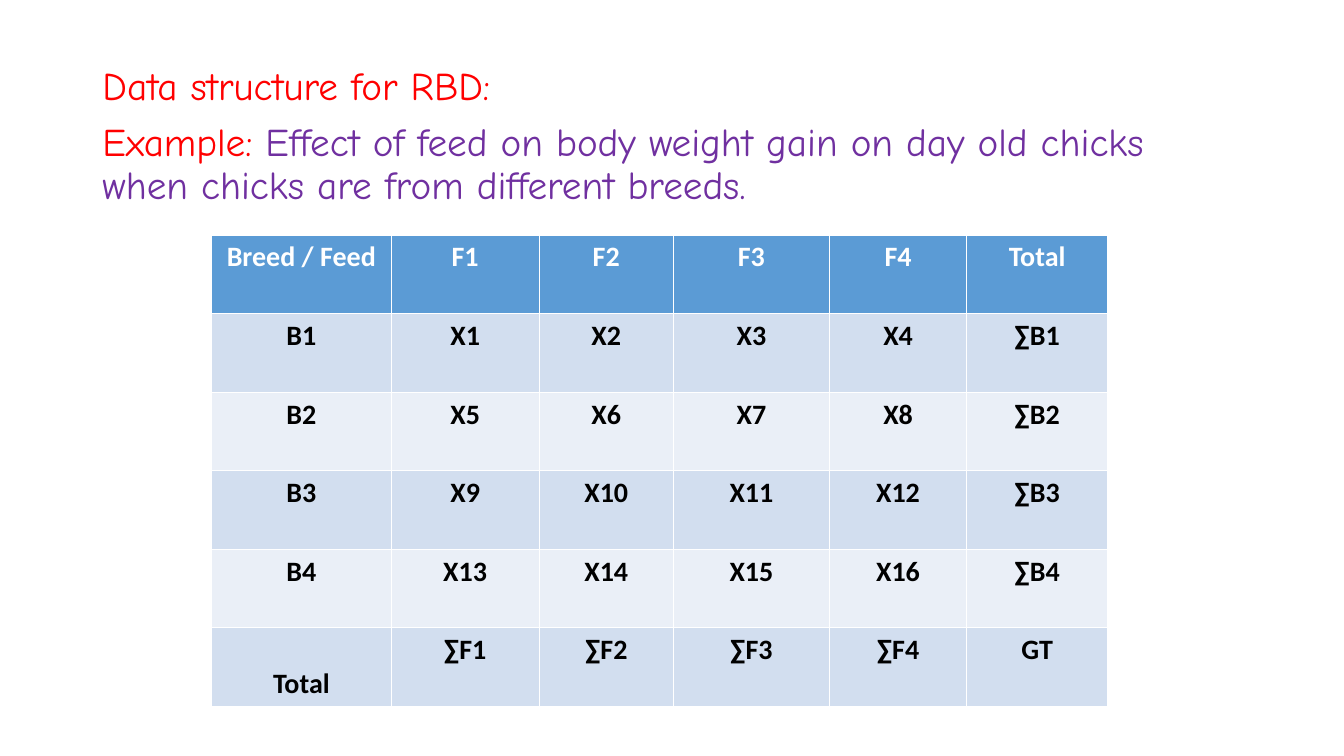
from pptx import Presentation
from pptx.dml.color import RGBColor as Rgb
from pptx.enum import text
from pptx.oxml import ns
from pptx.util import Pt
from lxml import etree

hues = {"red": "FF0000", "violet": "7030A0", "head": "5B9BD5", "dark": "D2DEEF",
        "light": "EAEFF7", "white": "FFFFFF", "black": "000000"}


def paint(item, hue):
    item.rgb = Rgb.from_string(hues[hue])


deck = Presentation()
deck.slide_width, deck.slide_height = Pt(960), Pt(540)
slide = deck.slides.add_slide(deck.slide_layouts[1])
title = slide.shapes.title.element
title.getparent().remove(title)

body = slide.placeholders[1]
body.left, body.top, body.width, body.height = Pt(66), Pt(44), Pt(828), Pt(443)
frame = body.text_frame
frame.word_wrap = True
frame.auto_size = text.MSO_AUTO_SIZE.NONE
frame.vertical_anchor = text.MSO_ANCHOR.TOP

intro = [
    [("Data structure for RBD:", "red")],
    [("Example: ", "red"),
     ("Effect of feed on body weight gain on day old chicks "
      "when chicks are from different breeds.", "violet")],
]
for n, parts in enumerate(intro):
    para = frame.add_paragraph() if n else frame.paragraphs[0]
    props = para._p.get_or_add_pPr()
    props.set("marL", "0")
    props.set("indent", "0")
    etree.SubElement(props, ns.qn("a:buNone"))
    para.line_spacing = 0.9
    para.space_before = Pt(10 * n)
    para.font.size = Pt(28)
    para.font.name = "Comic Neue"
    for words, hue in parts:
        run = para.add_run()
        run.text = words
        paint(run.font.color, hue)

count = 4
rows = [["Breed / Feed"] + [f"F{c}" for c in range(1, count + 1)] + ["Total"]]
for r in range(1, count + 1):
    marks = [f"X{(r - 1) * count + c}" for c in range(1, count + 1)]
    rows.append([f"B{r}"] + marks + [f"∑B{r}"])
rows.append(["Total"] + [f"∑F{c}" for c in range(1, count + 1)] + ["GT"])

widths = [128.2, 105.8, 95.8, 111.6, 97.9, 100.8]
high = 56.1
grid = slide.shapes.add_table(
    len(rows), len(widths), Pt(151.2), Pt(168), Pt(sum(widths)), Pt(high * len(rows))).table
for col, wide in zip(grid.columns, widths):
    col.width = Pt(wide)

for r, row in enumerate(rows):
    grid.rows[r].height = Pt(high)
    fill = "head" if r == 0 else "dark" if r % 2 else "light"
    for c, words in enumerate(row):
        cell = grid.cell(r, c)
        cell.text = words
        cell.fill.solid()
        paint(cell.fill.fore_color, fill)
        para = cell.text_frame.paragraphs[0]
        para.alignment = text.PP_ALIGN.CENTER
        para.font.size = Pt(20)
        para.font.name = "Calibri"
        para.font.bold = True
        paint(para.font.color, "black" if r else "white")
grid.cell(len(rows) - 1, 0).vertical_anchor = text.MSO_ANCHOR.BOTTOM

deck.save("out.pptx")
